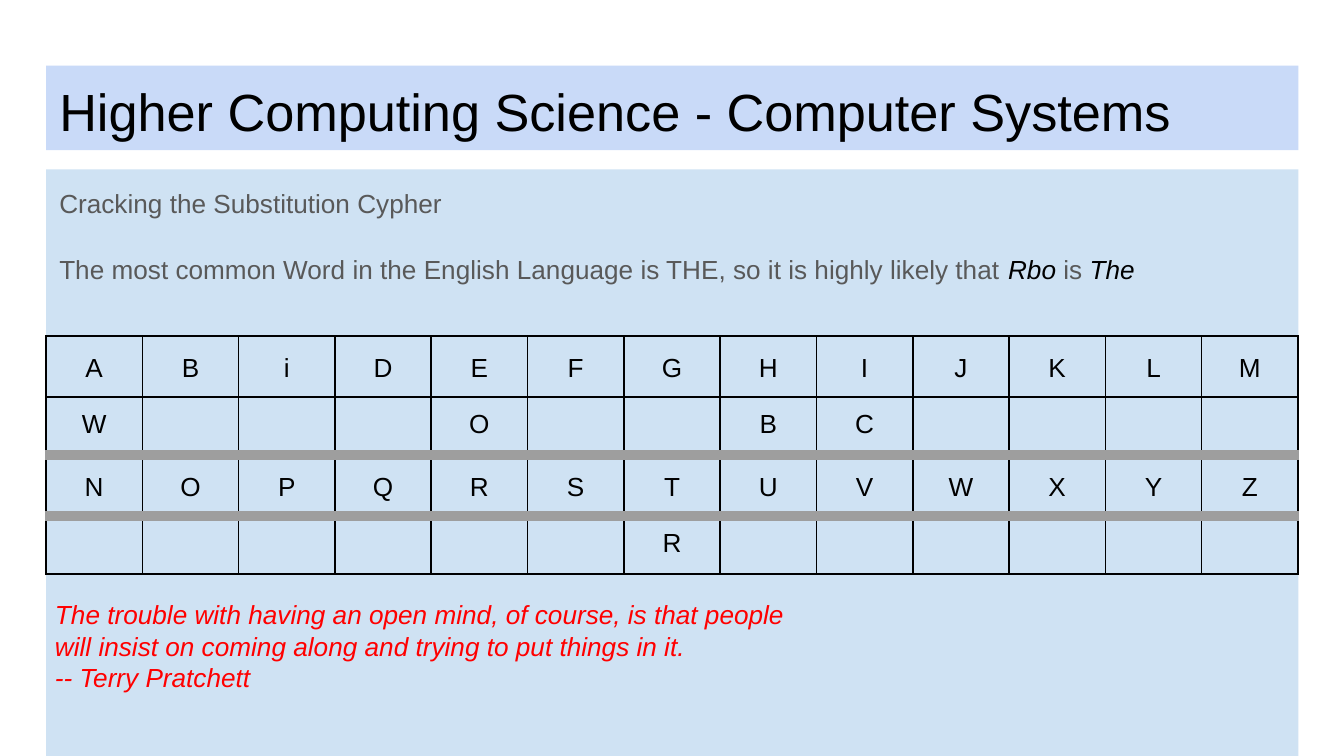
import pptx
import pptx.dml.color
import pptx.enum.text
import pptx.oxml
import pptx.oxml.ns
import pptx.util
from pptx.util import Cm

FONT = "Arial"
BLACK = "000000"
GREY = "595959"
RULE_GREY = "9E9E9E"
LETTER_ROWS = [
    list("ABiDEFGHIJKLM"),
    list("W   O  BC    "),
    list("NOPQRSTUVWXYZ"),
    list("      R      "),
]
ROW_HEIGHTS = [1.15, 1.1, 1.15, 1.1]


def color(value):
    return pptx.dml.color.RGBColor.from_string(value)


def format_run(run, size, value, italic=False):
    run.font.name = FONT
    run.font.size = pptx.util.Pt(size)
    run.font.color.rgb = color(value)
    run.font.italic = italic


def place(shape, box):
    shape.left, shape.top, shape.width, shape.height = (Cm(length) for length in box)


def prepare_frame(text_frame):
    text_frame.word_wrap = True
    text_frame.auto_size = pptx.enum.text.MSO_AUTO_SIZE.NONE
    text_frame.vertical_anchor = pptx.enum.text.MSO_ANCHOR.TOP
    for side in ("left", "right", "top", "bottom"):
        setattr(text_frame, f"margin_{side}", Cm(0.25))


def fill_placeholder(shape, box, value):
    place(shape, box)
    shape.fill.solid()
    shape.fill.fore_color.rgb = color(value)
    prepare_frame(shape.text_frame)


def add_title(slide, box):
    title = slide.shapes.title
    fill_placeholder(title, box, "C9DAF8")
    title.text_frame.text = "Higher Computing Science - Computer Systems"
    paragraph = title.text_frame.paragraphs[0]
    paragraph.alignment = pptx.enum.text.PP_ALIGN.LEFT
    format_run(paragraph.runs[0], 28, BLACK)


def add_body(slide, box):
    body = slide.placeholders[1]
    fill_placeholder(body, box, "CFE2F3")
    lines = [
        [("Cracking the Substitution Cypher", False)],
        [
            ("The most common Word in the English Language is THE, "
             "so it is highly likely that ", False),
            ("Rbo ", True),
            ("is ", False),
            ("The", True),
        ],
    ]
    for index, line in enumerate(lines):
        frame = body.text_frame
        paragraph = frame.add_paragraph() if index else frame.paragraphs[0]
        properties = paragraph._p.get_or_add_pPr()
        properties.set("marL", "0")
        properties.set("indent", "0")
        properties.append(pptx.oxml.parse_xml(
            f"<a:buNone {pptx.oxml.ns.nsdecls('a')}/>"))
        paragraph.line_spacing = 1.15
        paragraph.space_before = pptx.util.Pt(16 if index else 0)
        for text, is_example in line:
            run = paragraph.add_run()
            run.text = text
            format_run(run, 14, BLACK if is_example else GREY, is_example)


def add_quote(slide, box):
    quote = slide.shapes.add_textbox(*(Cm(length) for length in box))
    prepare_frame(quote.text_frame)
    quote.text_frame.text = (
        "The trouble with having an open mind, of course, is that people\n"
        "will insist on coming along and trying to put things in it.\n"
        "-- Terry Pratchett"
    )
    for paragraph in quote.text_frame.paragraphs:
        format_run(paragraph.runs[0], 14, "FF0000", True)


def set_borders(cell, top, bottom):
    properties = cell._tc.get_or_add_tcPr()
    sides = [("L", (BLACK, 1)), ("R", (BLACK, 1)), ("T", top), ("B", bottom)]
    for index, (side, (value, width)) in enumerate(sides):
        properties.insert(index, pptx.oxml.parse_xml(
            f'<a:ln{side} {pptx.oxml.ns.nsdecls("a")} w="{pptx.util.Pt(width)}">'
            f'<a:solidFill><a:srgbClr val="{value}"/></a:solidFill></a:ln{side}>'))


def fill_cell(cell, letter, line_spacing):
    cell.fill.background()
    margin = Cm(0.25) if letter.strip() else Cm(0.1)
    cell.margin_left = cell.margin_right = margin
    cell.margin_top = cell.margin_bottom = margin
    if letter.strip():
        cell.text_frame.text = letter
        paragraph = cell.text_frame.paragraphs[0]
        paragraph.alignment = pptx.enum.text.PP_ALIGN.CENTER
        paragraph.line_spacing = line_spacing
        format_run(paragraph.runs[0], 14, BLACK)


def add_letter_table(slide, box):
    shape = slide.shapes.add_table(
        len(LETTER_ROWS), len(LETTER_ROWS[0]), *(Cm(length) for length in box))
    table = shape.table
    table.first_row = False
    table.horz_banding = False
    for column in table.columns:
        column.width = Cm(box[2] / len(LETTER_ROWS[0]))
    thin, thick = (BLACK, 1), (RULE_GREY, 6)
    rules = [thin, thin, thick, thick, thin]
    for row, letters in enumerate(LETTER_ROWS):
        table.rows[row].height = Cm(ROW_HEIGHTS[row])
        for column, letter in enumerate(letters):
            cell = table.cell(row, column)
            fill_cell(cell, letter, 1.0 if row % 2 else 1.15)
            set_borders(cell, rules[row], rules[row + 1])


def main():
    presentation = pptx.Presentation()
    presentation.slide_width = Cm(25.4)
    presentation.slide_height = Cm(14.29)
    slide = presentation.slides.add_slide(presentation.slide_layouts[1])
    left, width = 0.87, 23.67
    add_title(slide, (left, 1.24, width, 1.6))
    add_body(slide, (left, 3.2, width, 11.35))
    add_quote(slide, (0.79, 11.07, 23.32, 2))
    add_letter_table(slide, (left, 6.35, width, sum(ROW_HEIGHTS)))
    presentation.save("out.pptx")


if __name__ == "__main__":
    main()
